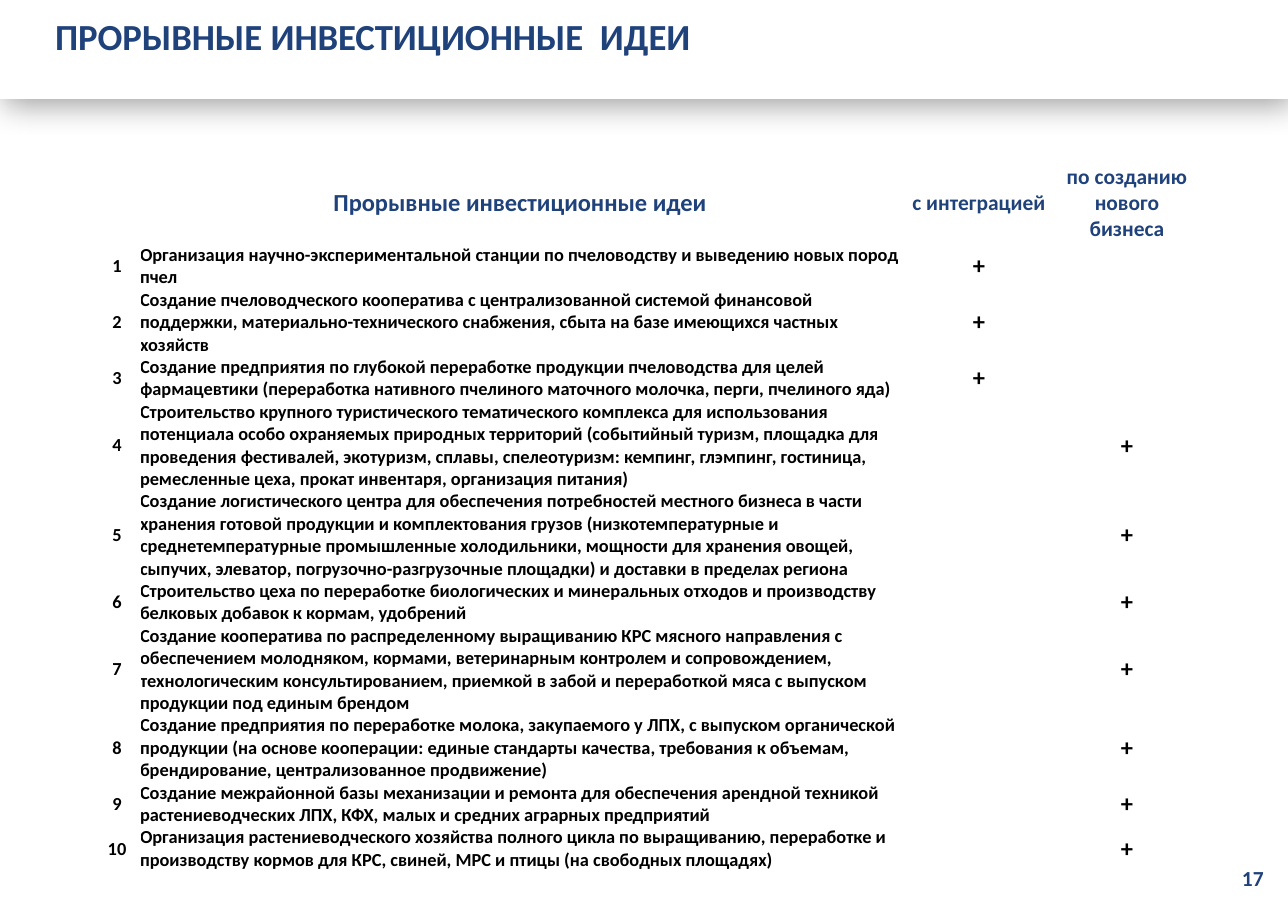
from dataclasses import dataclass
from lxml import etree
from pptx import Presentation
from pptx.dml.color import RGBColor
from pptx.enum import shapes, text
from pptx.oxml import ns
from pptx.util import Pt

SCALE = 8298  # EMU in one px


@dataclass(frozen=True)
class Theme:
    navy: str = "1F427B"
    black: str = "000000"
    white: str = "FFFFFF"
    face: str = "Calibri"
    title: int = 24
    head: int = 16
    sub: int = 14
    body: int = 12


T = Theme()
LEFT, MID = text.PP_ALIGN.LEFT, text.PP_ALIGN.CENTER
TOP, CORE = text.MSO_ANCHOR.TOP, text.MSO_ANCHOR.MIDDLE

COLS = [46, 760, 158, 138]
HEAD = ["", "Прорывные инвестиционные идеи", "с интеграцией",
        "по созданию нового бизнеса"]
JOIN, NEW = ("+", ""), ("", "+")
# Each idea: lines of text, mark columns, wording
IDEAS = [
    (2, JOIN, "Организация научно-экспериментальной станции по пчеловодству и "
              "выведению новых пород пчел"),
    (3, JOIN, "Создание пчеловодческого кооператива с централизованной системой "
              "финансовой поддержки, материально-технического снабжения, сбыта "
              "на базе имеющихся частных хозяйств"),
    (2, JOIN, "Создание предприятия по глубокой переработке продукции "
              "пчеловодства для целей фармацевтики (переработка нативного "
              "пчелиного маточного молочка, перги, пчелиного яда)"),
    (4, NEW, "Строительство крупного туристического тематического комплекса для "
             "использования потенциала особо охраняемых природных территорий "
             "(событийный туризм, площадка для проведения фестивалей, экотуризм, "
             "сплавы, спелеотуризм: кемпинг, глэмпинг, гостиница, ремесленные "
             "цеха, прокат инвентаря, организация питания)"),
    (4, NEW, "Создание логистического центра для обеспечения потребностей "
             "местного бизнеса в части хранения готовой продукции и "
             "комплектования грузов (низкотемпературные и среднетемпературные "
             "промышленные холодильники, мощности для хранения овощей, сыпучих, "
             "элеватор, погрузочно-разгрузочные площадки) и доставки в пределах "
             "региона"),
    (2, NEW, "Строительство цеха по переработке биологических и минеральных "
             "отходов и производству белковых добавок к кормам, удобрений"),
    (4, NEW, "Создание кооператива по распределенному выращиванию КРС мясного "
             "направления с обеспечением молодняком, кормами, ветеринарным "
             "контролем и сопровождением, технологическим консультированием, "
             "приемкой в забой и переработкой мяса с выпуском продукции под "
             "единым брендом"),
    (3, NEW, "Создание предприятия по переработке молока, закупаемого у ЛПХ, с "
             "выпуском органической продукции (на основе кооперации: единые "
             "стандарты качества, требования к объемам, брендирование, "
             "централизованное продвижение)"),
    (2, NEW, "Создание межрайонной базы механизации и ремонта для обеспечения "
             "арендной техникой растениеводческих ЛПХ, КФХ, малых и средних "
             "аграрных предприятий"),
    (2, NEW, "Организация растениеводческого хозяйства полного цикла по "
             "выращиванию, переработке и производству кормов для КРС, свиней, "
             "МРС и птицы (на свободных площадях)"),
]


def px(*vals):
    return [val * SCALE for val in vals]


def put(item, attrs):
    for name, val in attrs.items():
        setattr(item, name, val)


def pad(item, left=0, top=0, right=0, base=0):
    names = ("margin_left", "margin_top", "margin_right", "margin_bottom")
    put(item, dict(zip(names, px(left, top, right, base))))


def write(frame, words, size, tone, align=LEFT, gap=0):
    par = frame.paragraphs[0]
    put(par, {"alignment": align, "space_before": Pt(gap)})
    run = par.add_run()
    run.text = words
    put(run.font, {"name": T.face, "size": Pt(size), "bold": True})
    run.font.color.rgb = RGBColor.from_string(tone)


def fill_cell(cell, words, size, tone, align):
    cell.fill.background()
    cell.vertical_anchor = CORE
    pad(cell)
    if words:
        write(cell.text_frame, words, size, tone, align)


def add_ideas(slide, box):
    high = [82] + [22 * lines for lines, _, _ in IDEAS]
    grid = slide.shapes.add_table(len(high), len(COLS), *px(*box)).table
    put(grid, {"first_row": False, "horz_banding": False})
    for col, wide in zip(grid.columns, px(*COLS)):
        col.width = wide
    for row, tall in zip(grid.rows, px(*high)):
        row.height = tall

    # Header row
    sizes = [T.body, T.head, T.sub, T.sub]
    for cell, words, size in zip(grid.rows[0].cells, HEAD, sizes):
        fill_cell(cell, words, size, T.navy, MID)

    # Numbered ideas with their marks
    sizes = [T.body, T.body, T.head, T.head]
    aligns = [MID, LEFT, MID, MID]
    for num, (_, marks, idea) in enumerate(IDEAS, 1):
        parts = zip(grid.rows[num].cells, (str(num), idea, *marks), sizes, aligns)
        for cell, words, size, align in parts:
            fill_cell(cell, words, size, T.black, align)


def add_shade(shape):
    root = etree.SubElement(shape.element.spPr, ns.qn("a:effectLst"))
    cast = etree.SubElement(root, ns.qn("a:outerShdw"), blurRad=str(Pt(22)),
                            dist=str(Pt(3)), dir="2700000", algn="tl",
                            rotWithShape="0")
    tone = etree.SubElement(cast, ns.qn("a:srgbClr"), val=T.black)
    etree.SubElement(tone, ns.qn("a:alpha"), val="40000")


def add_band(slide, box):
    left, top, wide, _ = box
    # White band with a soft shadow
    band = slide.shapes.add_shape(shapes.MSO_SHAPE.RECTANGLE, *px(*box))
    band.fill.solid()
    band.fill.fore_color.rgb = RGBColor.from_string(T.white)
    band.line.fill.background()
    add_shade(band)

    # Title in front of the band
    title = slide.shapes.title
    spot = px(left + 54, top + 13, wide - 108, 46)
    put(title, dict(zip(("left", "top", "width", "height"), spot)))
    frame = title.text_frame
    put(frame, {"word_wrap": True, "vertical_anchor": TOP,
                "auto_size": text.MSO_AUTO_SIZE.NONE})
    pad(frame, left=1, top=1)
    write(frame, "ПРОРЫВНЫЕ ИНВЕСТИЦИОННЫЕ  ИДЕИ", T.title, T.navy, gap=1)
    band.element.addnext(title.element)


def add_page(slide, box):
    frame = slide.shapes.add_textbox(*px(*box)).text_frame
    put(frame, {"word_wrap": True, "vertical_anchor": TOP})
    pad(frame, 8, 5, 11, 5)
    write(frame, "17", T.sub, T.navy, gap=2)


def main():
    deck = Presentation()
    deck.slide_width, deck.slide_height = px(1288, 911)
    slide = deck.slides.add_slide(deck.slide_layouts[5])
    add_ideas(slide, (94, 162, sum(COLS), 703))
    add_band(slide, (0, 0, 1288, 99))
    add_page(slide, (1234, 860, 53, 51))
    deck.save("out.pptx")


if __name__ == "__main__":
    main()
